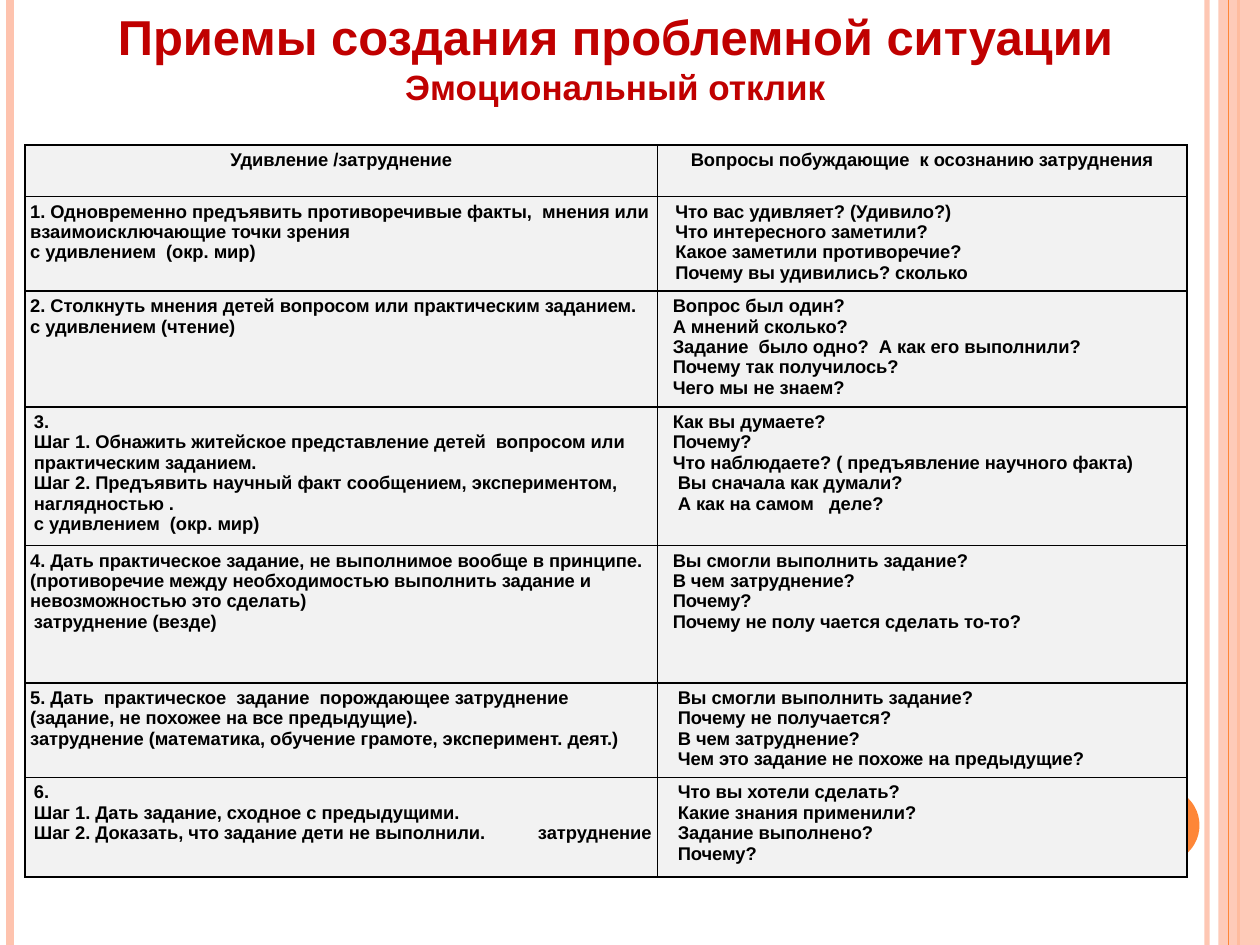
import pptx
import pptx.util
import pptx.dml.color
import pptx.enum.shapes
import pptx.enum.text
import pptx.oxml
import pptx.oxml.ns
from lxml import etree

Inches, Pt = pptx.util.Inches, pptx.util.Pt
qn = pptx.oxml.ns.qn
ALIGN = pptx.enum.text.PP_ALIGN
SHAPE = pptx.enum.shapes.MSO_SHAPE

COLORS = {"peach": "FEC3AE", "orange": "FE8637", "title": "C00000",
          "text": "000000", "cell": "F2F2F2", "border": "000000"}

HEADINGS = ["Удивление /затруднение", "Вопросы побуждающие  к осознанию затруднения"]
COLUMN_WIDTHS = [5.02, 4.2]
ROW_HEIGHTS = [0.41, 0.75, 0.92, 1.1, 1.09, 0.75, 0.79]
TAB_STOP = 3.77

# Each cell is a list of (indent in inches, lines).
TECHNIQUES = [
    ([(0, ["1. Одновременно предъявить противоречивые факты,  мнения или взаимоисключающие точки зрения",
           "с удивлением  (окр. мир)"])],
     [(0.1, ["Что вас удивляет? (Удивило?)", "Что интересного заметили?",
             "Какое заметили противоречие?", "Почему вы удивились? сколько"])]),
    ([(0, ["2. Столкнуть мнения детей вопросом или практическим заданием.",
           "с удивлением (чтение)"])],
     [(0.08, ["Вопрос был один?", "А мнений сколько?",
              "Задание  было одно?  А как его выполнили?",
              "Почему так получилось?", "Чего мы не знаем?"])]),
    ([(0.03, ["3.",
              "Шаг 1. Обнажить житейское представление детей  вопросом или практическим заданием.",
              "Шаг 2. Предъявить научный факт сообщением, экспериментом, наглядностью .",
              "с удивлением  (окр. мир)"])],
     [(0.08, ["Как вы думаете?", "Почему?",
              "Что наблюдаете? ( предъявление научного факта)"]),
      (0.12, ["Вы сначала как думали?", "А как на самом   деле?"])]),
    ([(0, ["4. Дать практическое задание, не выполнимое вообще в принципе. "
           "(противоречие между необходимостью выполнить задание и невозможностью это сделать)"]),
      (0.03, ["затруднение (везде)"])],
     [(0.08, ["Вы смогли выполнить задание?", "В чем затруднение?", "Почему?",
              "Почему не полу чается сделать то-то?"])]),
    ([(0, ["5. Дать  практическое  задание  порождающее затруднение  "
           "(задание, не похожее на все предыдущие).",
           "затруднение (математика, обучение грамоте, эксперимент. деят.)"])],
     [(0.12, ["Вы смогли выполнить задание?", "Почему не получается?",
              "В чем затруднение?", "Чем это задание не похоже на предыдущие?"])]),
    ([(0.03, ["6.", "Шаг 1. Дать задание, сходное с предыдущими.",
              "Шаг 2. Доказать, что задание дети не выполнили.\tзатруднение"])],
     [(0.12, ["Что вы хотели сделать?", "Какие знания применили?",
              "Задание выполнено?", "Почему?"])]),
]


def rgb(color):
    return pptx.dml.color.RGBColor.from_string(COLORS[color])


class SlideBuilder:
    font = "Arial"

    def __init__(self, slide):
        self.slide = slide

    def set_alpha(self, element, percent):
        color = next(element.iter(qn("a:srgbClr")))
        etree.SubElement(color, qn("a:alpha")).set("val", str(percent * 1000))

    def stripe(self, x, color, weight, alpha=100):
        """Draw a vertical line over the full slide height."""
        line = self.slide.shapes.add_connector(
            pptx.enum.shapes.MSO_CONNECTOR.STRAIGHT,
            Inches(x), 0, Inches(x), Inches(7.5))
        line.line.color.rgb = rgb(color)
        line.line.width = Pt(weight)
        properties = line._element.spPr
        if alpha < 100:
            self.set_alpha(properties, alpha)
        etree.SubElement(properties, qn("a:effectLst"))

    def shape(self, preset, box, color, alpha=100):
        shape = self.slide.shapes.add_shape(preset, *map(Inches, box))
        shape.shadow.inherit = False
        shape.fill.solid()
        shape.fill.fore_color.rgb = rgb(color)
        shape.line.fill.background()
        if alpha < 100:
            self.set_alpha(shape._element.spPr, alpha)

    def run(self, paragraph, text, size, color):
        run = paragraph.add_run()
        run.text = text
        run.font.name = self.font
        run.font.size = Pt(size)
        run.font.bold = True
        run.font.color.rgb = rgb(color)

    def title(self, box, heading, subheading):
        title = self.slide.shapes.title
        title.left, title.top, title.width, title.height = map(Inches, box)
        frame = title.text_frame
        frame.word_wrap = True
        frame.auto_size = pptx.enum.text.MSO_AUTO_SIZE.NONE
        frame.vertical_anchor = pptx.enum.text.MSO_ANCHOR.TOP
        paragraph = frame.paragraphs[0]
        paragraph.alignment = ALIGN.CENTER
        self.run(paragraph, heading, 28, "title")
        paragraph.add_line_break()
        self.run(paragraph, subheading, 20, "title")

    def cell(self, cell, blocks, align=ALIGN.LEFT):
        cell.fill.solid()
        cell.fill.fore_color.rgb = rgb("cell")
        cell.margin_left = cell.margin_right = Inches(0.04)
        cell.margin_top = cell.margin_bottom = Inches(0.04)
        self.borders(cell)
        frame = cell.text_frame
        lines = [(indent, line) for indent, block in blocks for line in block]
        for number, (indent, line) in enumerate(lines):
            paragraph = frame.add_paragraph() if number else frame.paragraphs[0]
            paragraph.alignment = align
            properties = paragraph._p.get_or_add_pPr()
            properties.set("marL", str(Inches(indent)))
            properties.set("indent", "0")
            if "\t" in line:
                stops = etree.SubElement(properties, qn("a:tabLst"))
                etree.SubElement(stops, qn("a:tab"), pos=str(Inches(TAB_STOP)), algn="l")
            self.run(paragraph, line, 10.5, "text")

    def borders(self, cell):
        properties = cell._tc.get_or_add_tcPr()
        for position, side in enumerate(("a:lnL", "a:lnR", "a:lnT", "a:lnB")):
            border = etree.Element(qn(side), w=str(Pt(1)))
            fill = etree.SubElement(border, qn("a:solidFill"))
            etree.SubElement(fill, qn("a:srgbClr"), val=COLORS["border"])
            properties.insert(position, border)

    def table(self, left, top):
        table = self.slide.shapes.add_table(
            len(ROW_HEIGHTS), len(COLUMN_WIDTHS), Inches(left), Inches(top),
            Inches(sum(COLUMN_WIDTHS)), Inches(sum(ROW_HEIGHTS))).table
        for column, width in zip(table.columns, COLUMN_WIDTHS):
            column.width = Inches(width)
        for row, height in zip(table.rows, ROW_HEIGHTS):
            row.height = Inches(height)
        for column, heading in enumerate(HEADINGS):
            self.cell(table.cell(0, column), [(0, [heading])], ALIGN.CENTER)
        for row, technique in enumerate(TECHNIQUES, 1):
            for column, blocks in enumerate(technique):
                self.cell(table.cell(row, column), blocks)


def main():
    deck = pptx.Presentation()
    deck.slide_width, deck.slide_height = Inches(10), Inches(7.5)
    page = SlideBuilder(deck.slides.add_slide(deck.slide_layouts[5]))
    page.stripe(9.58, "peach", 3, alpha=93)
    page.stripe(0.08, "peach", 4.5)
    page.stripe(9.83, "orange", 1.5)
    page.shape(SHAPE.RECTANGLE, (9.67, 0, 0.33, 7.5), "peach", alpha=87)
    page.stripe(9.75, "orange", 0.75)
    page.shape(SHAPE.OVAL, (8.92, 6.25, 0.6, 0.6), "orange")
    page.table(0.2, 1.15)
    page.title((0.28, 0, 9.21, 0.91), "Приемы создания проблемной ситуации",
               "Эмоциональный отклик")
    deck.save("out.pptx")


if __name__ == "__main__":
    main()
